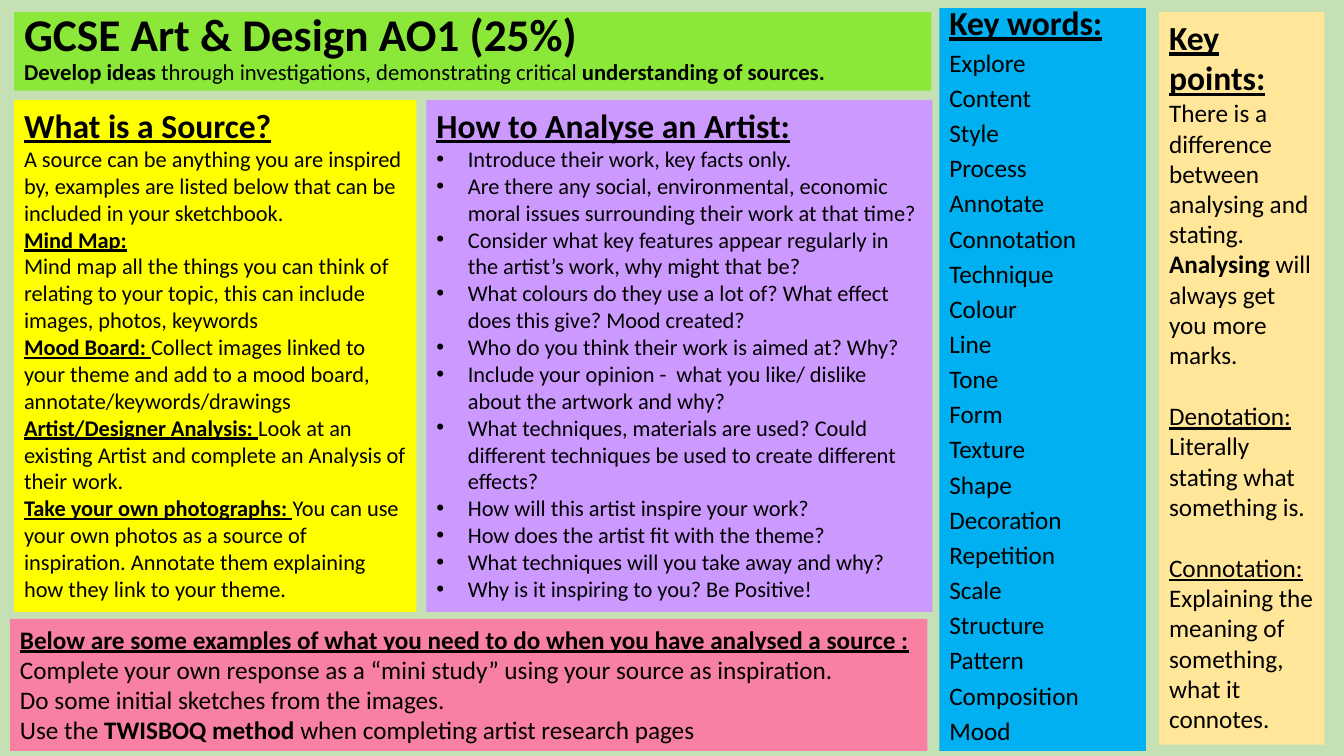
from lxml.etree import SubElement
from pptx import Presentation
from pptx.dml.color import RGBColor
from pptx.enum.text import MSO_ANCHOR as Anchor
from pptx.oxml.ns import qn
from pptx.util import Pt

COLOURS = {
    "background": "C5E0B4", "title": "8CE838", "source": "FFFF00",
    "artist": "CC99FF", "examples": "F880A2", "keywords": "00B0F0",
    "points": "FFE699", "text": "000000",
}
BOLD, UNDERLINE, HEADING = "b", "u", "bu"


def add_panel(colour, left, top, width, height, anchor=Anchor.TOP):
    """Add a filled text panel and return its text frame."""
    panel = slide.shapes.add_textbox(Pt(left), Pt(top), Pt(width), Pt(height))
    panel.fill.solid()
    panel.fill.fore_color.rgb = RGBColor.from_string(COLOURS[colour])
    panel.text_frame.word_wrap = True
    panel.text_frame.vertical_anchor = anchor
    return panel.text_frame


def write(frame, *runs, size=16, style="", spacing=None, before=0, bullet=False):
    """Write a paragraph; each run is a string or a (string, style) pair."""
    first = frame.paragraphs[0]
    para = frame.add_paragraph() if first.runs else first
    para.space_before = Pt(before)
    if spacing:
        para.line_spacing = spacing
    if bullet:
        props = para._p.get_or_add_pPr()
        props.set("marL", str(Pt(22.5)))
        props.set("indent", str(-Pt(22.5)))
        SubElement(props, qn("a:buFont")).set("typeface", "Arial")
        SubElement(props, qn("a:buChar")).set("char", "•")
    for item in runs:
        text, run_style = (item, style) if isinstance(item, str) else item
        run = para.add_run()
        run.text = text
        run.font.name = "Calibri"
        run.font.size = Pt(size)
        run.font.bold = BOLD in run_style
        run.font.underline = UNDERLINE in run_style
        run.font.color.rgb = RGBColor.from_string(COLOURS["text"])


prs = Presentation()
prs.slide_width, prs.slide_height = Pt(960), Pt(540)
slide = prs.slides.add_slide(prs.slide_layouts[6])
slide.background.fill.solid()
slide.background.fill.fore_color.rgb = RGBColor.from_string(COLOURS["background"])

# Title
title = add_panel("title", 10.1, 8.6, 655.2, 56.2, anchor=Anchor.BOTTOM)
write(title, "GCSE Art & Design AO1 (25%)", size=32.4, style=BOLD, spacing=0.9)
write(title, ("Develop ideas", BOLD),
      " through investigations, demonstrating critical ",
      ("understanding of sources.", BOLD), size=16.2, spacing=0.9)

# Key words
keywords = add_panel("keywords", 671, 5.8, 147.6, 530.6)
write(keywords, "Key words:", size=24, style=HEADING, spacing=0.7, before=10)
for word in ("Explore", "Content", "Style", "Process", "Annotate", "Connotation",
             "Technique", "Colour", "Line", "Tone", "Form", "Texture", "Shape",
             "Decoration", "Repetition", "Scale", "Structure", "Pattern",
             "Composition", "Mood"):
    write(keywords, word, size=18, spacing=0.7, before=10)

# Sources
source = add_panel("source", 10.1, 71.3, 287.3, 365.8)
write(source, "What is a Source?", size=24, style=HEADING)
write(source, "A source can be anything you are inspired by, examples are listed "
              "below that can be included in your sketchbook.")
write(source, "Mind Map:", style=HEADING)
write(source, "Mind map all the things you can think of relating to your topic, "
              "this can include images, photos, keywords")
for label, advice in (
    ("Mood Board: ", "Collect images linked to your theme and add to a mood board, "
                     "annotate/keywords/drawings"),
    ("Artist/Designer Analysis: ", "Look at an existing Artist and complete an "
                                   "Analysis of their work."),
    ("Take your own photographs: ", "You can use your own photos as a source of "
     "inspiration. Annotate them explaining how they link to your theme."),
):
    write(source, (label, HEADING), advice)

# Artist analysis
artist = add_panel("artist", 304.6, 71.3, 361.4, 365.8)
write(artist, "How to Analyse an Artist:", size=24, style=HEADING)
for step in (
    "Introduce their work, key facts only.",
    "Are there any social, environmental, economic moral issues surrounding "
    "their work at that time?",
    "Consider what key features appear regularly in the artist’s work, why "
    "might that be?",
    "What colours do they use a lot of? What effect does this give? Mood created?",
    "Who do you think their work is aimed at? Why?",
    "Include your opinion -  what you like/ dislike about the artwork and why?",
    "What techniques, materials are used? Could different techniques be used to "
    "create different effects?",
    "How will this artist inspire your work?",
    "How does the artist fit with the theme?",
    "What techniques will you take away and why?",
    "Why is it inspiring to you? Be Positive!",
):
    write(artist, step, bullet=True)

# Examples
examples = add_panel("examples", 7.2, 442.1, 655.2, 94.3)
write(examples, "Below are some examples of what you need to do when you have "
                "analysed a source :", size=18, style=HEADING)
write(examples, "Complete your own response as a “mini study” using your source "
                "as inspiration.", size=18)
write(examples, "Do some initial sketches from the images.", size=18)
write(examples, "Use the ", ("TWISBOQ method ", BOLD),
      "when completing artist research pages", size=18)

# Key points
points = add_panel("points", 828, 8.6, 118.1, 523.4)
write(points, "Key points:", size=24, style=HEADING)
write(points, "There is a difference between analysing and stating. ",
      ("Analysing", BOLD), " will always get you more marks.", size=18)
write(points, ("Denotation: ", UNDERLINE), "Literally stating what something is.",
      size=18, before=22)
write(points, "Connotation:", size=18, style=UNDERLINE, before=22)
write(points, "Explaining the meaning of something, what it connotes.", size=18)

prs.save("out.pptx")
